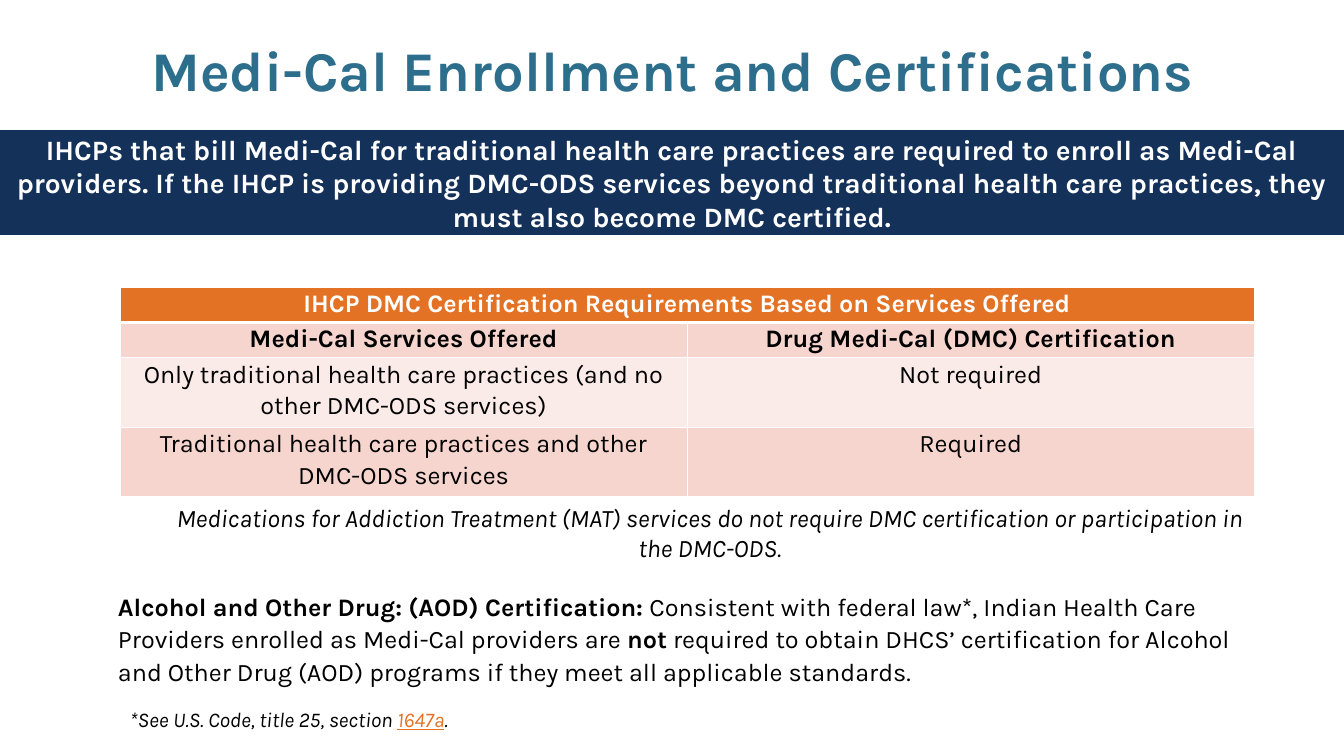
from lxml import etree
from pptx import Presentation
from pptx.dml.color import RGBColor
from pptx.enum.shapes import MSO_SHAPE
from pptx.enum.text import MSO_ANCHOR, MSO_AUTO_SIZE, PP_ALIGN
from pptx.oxml.ns import qn
from pptx.util import Inches, Pt

CENTER, LEFT = PP_ALIGN.CENTER, PP_ALIGN.LEFT
TOP, MIDDLE = MSO_ANCHOR.TOP, MSO_ANCHOR.MIDDLE
NO_AUTOFIT = MSO_AUTO_SIZE.NONE
RECTANGLE = MSO_SHAPE.RECTANGLE

FONT = "Karla"
WHITE, BLACK, ORANGE = "FFFFFF", "000000", "E47225"
TEAL, NAVY = "2D6E8D", "14315A"
ROSE, PALE_ROSE = "F5D5CD", "FAEBE8"

SERVICES = [
    ("IHCP DMC Certification Requirements Based on Services Offered", ""),
    ("Medi-Cal Services Offered", "Drug Medi-Cal (DMC) Certification"),
    ("Only traditional health care practices (and no other DMC-ODS services)", "Not required"),
    ("Traditional health care practices and other DMC-ODS services", "Required"),
]
ROW_HEIGHTS = [0.35, 0.35, 0.69, 0.69]
ROW_FILLS = [ORANGE, ROSE, PALE_ROSE, ROSE]


def color(value):
    return RGBColor.from_string(value)


def place(shape, box):
    for name, length in zip(("left", "top", "width", "height"), box):
        setattr(shape, name, Inches(length))


def write(frame, runs, size, fill, align=LEFT, spacing=1.0, after=0, **base):
    """Fill a frame with one paragraph of (text, format values) runs."""
    paragraph = frame.paragraphs[0]
    values = {"alignment": align, "line_spacing": spacing,
              "space_before": Pt(0), "space_after": Pt(after)}
    for name, value in values.items():
        setattr(paragraph, name, value)
    for text, changes in runs:
        run = paragraph.add_run()
        run.text = text
        font_values = {"name": FONT, "size": Pt(size), **base, **changes}
        run_fill = font_values.pop("fill", fill)
        for name, value in font_values.items():
            setattr(run.font, name, value)
        run.font.color.rgb = color(run_fill)
    return paragraph


def set_frame(frame, anchor):
    values = {"word_wrap": True, "auto_size": NO_AUTOFIT, "vertical_anchor": anchor}
    for name, value in values.items():
        setattr(frame, name, value)


def add_title(slide, box):
    title = slide.shapes.title
    place(title, box)
    set_frame(title.text_frame, MIDDLE)
    write(title.text_frame, [("Medi-Cal Enrollment and Certifications", {})],
          40, TEAL, CENTER, 0.9, bold=True)


def add_certification_body(slide, box):
    body = slide.placeholders[1]
    place(body, box)
    set_frame(body.text_frame, TOP)
    paragraph = write(body.text_frame, [
        ("Alcohol and Other Drug: (AOD) Certification:", {"bold": True}),
        (" Consistent with federal law*, Indian Health Care Providers enrolled as "
         "Medi-Cal providers are ", {}),
        ("not", {"bold": True}),
        (" required to obtain DHCS’ certification for Alcohol and Other Drug (AOD) "
         "programs if they meet all applicable standards.", {}),
    ], 18, BLACK, spacing=1.08, after=10, bold=False)
    # Plain paragraph without bullet or indent
    properties = paragraph._p.get_or_add_pPr()
    properties.set("marL", "0")
    properties.set("indent", "0")
    etree.SubElement(properties, qn("a:buNone"))


def add_note(slide, box, runs, size, align):
    note = slide.shapes.add_textbox(*map(Inches, box))
    set_frame(note.text_frame, TOP)
    write(note.text_frame, runs, size, BLACK, align, italic=True)


def add_banner(slide, box):
    banner = slide.shapes.add_shape(RECTANGLE, *map(Inches, box))
    banner.shadow.inherit = False
    banner.fill.solid()
    banner.fill.fore_color.rgb = color(NAVY)
    banner.line.fill.background()
    set_frame(banner.text_frame, MIDDLE)
    write(banner.text_frame, [(
        "IHCPs that bill Medi-Cal for traditional health care practices are required "
        "to enroll as Medi-Cal providers. If the IHCP is providing DMC-ODS services "
        "beyond traditional health care practices, they must also become DMC certified.",
        {})], 20, WHITE, CENTER, bold=True)


def set_borders(cell, widths):
    """Draw white borders; widths in points for left, right, top and bottom."""
    properties = cell._tc.get_or_add_tcPr()
    for index, (side, width) in enumerate(zip("LRTB", widths)):
        line = etree.Element(qn(f"a:ln{side}"), w=str(Pt(width)))
        fill = etree.SubElement(line, qn("a:solidFill"))
        etree.SubElement(fill, qn("a:srgbClr"), val=WHITE)
        properties.insert(index, line)


def add_services_table(slide, box):
    table = slide.shapes.add_table(len(SERVICES), 2, *map(Inches, box)).table
    for column in table.columns:
        column.width = Inches(box[2] / 2)
    margins = {"margin_left": 0.07, "margin_right": 0.07,
               "margin_top": 0, "margin_bottom": 0}
    for row, texts in enumerate(SERVICES):
        table.rows[row].height = Inches(ROW_HEIGHTS[row])
        for column, text in enumerate(texts):
            cell = table.cell(row, column)
            for name, length in margins.items():
                setattr(cell, name, Inches(length))
            cell.fill.solid()
            cell.fill.fore_color.rgb = color(ROW_FILLS[row])
            set_borders(cell, (1, 1, 3 if row == 1 else 1, 3 if row == 0 else 1))
            if text:
                write(cell.text_frame, [(text, {})], 18, WHITE if row == 0 else BLACK,
                      CENTER, 1.07, bold=row < 2)
    table.cell(0, 0).merge(table.cell(0, 1))


def build_slide(presentation):
    slide = presentation.slides.add_slide(presentation.slide_layouts[1])
    add_title(slide, (0.92, 0, 11.5, 1.45))
    add_certification_body(slide, (1.07, 5.79, 11.48, 1.42))
    add_services_table(slide, (1.19, 2.85, 11.25, 2.08))
    # Notes below the table and at the foot
    add_note(slide, (1.64, 4.93, 10.8, 1.01), [(
        "Medications for Addiction Treatment (MAT) services do not require DMC "
        "certification or participation in the DMC-ODS.", {})], 18, CENTER)
    add_note(slide, (1.19, 6.96, 3.8, 0.35), [
        ("*See U.S. Code, title 25, section ", {}),
        ("1647a", {"fill": ORANGE, "underline": True}),
        (".", {}),
    ], 15, LEFT)
    add_banner(slide, (0, 1.29, 13.33, 1.04))


def main():
    presentation = Presentation()
    presentation.slide_width = Inches(13.33)
    presentation.slide_height = Inches(7.5)
    build_slide(presentation)
    presentation.save("out.pptx")


if __name__ == "__main__":
    main()
